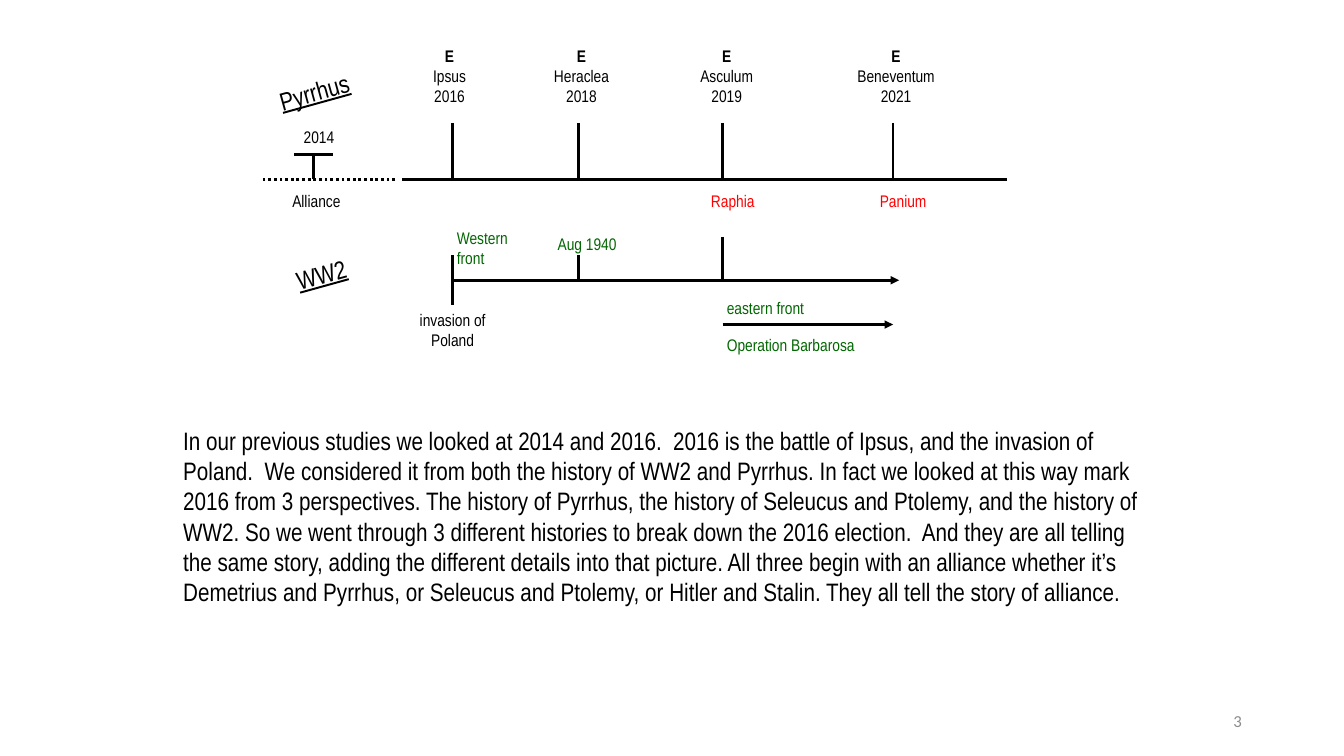
from lxml import etree
from pptx import Presentation
from pptx.dml.color import RGBColor
from pptx.enum.dml import MSO_LINE
from pptx.enum.shapes import MSO_CONNECTOR
from pptx.enum.text import MSO_ANCHOR, PP_ALIGN
from pptx.oxml.ns import qn
from pptx.util import Pt

LEFT, CENTER, RIGHT = PP_ALIGN.LEFT, PP_ALIGN.CENTER, PP_ALIGN.RIGHT
STRAIGHT, DOTTED = MSO_CONNECTOR.STRAIGHT, MSO_LINE.ROUND_DOT
TOP, MIDDLE = MSO_ANCHOR.TOP, MSO_ANCHOR.MIDDLE
BLACK = RGBColor(0, 0, 0)
RED = RGBColor(0xFF, 0, 0)
GREEN = RGBColor(0, 0x66, 0)
GRAY = RGBColor(0x8C, 0x8C, 0x8C)
NARROW = "Arial Narrow"

# Content: mark x, label centre x, battle, year
BATTLES = [
    (323.3, 321.1, "Ipsus", "2016"),
    (413.3, 415.4, "Heraclea", "2018"),
    (516.2, 519.1, "Asculum", "2019"),
    (637.9, 640.1, "Beneventum", "2021"),
]
IPSUS_X, HERACLEA_X, ASCULUM_X, BENEVENTUM_X = [b[0] for b in BATTLES]
PYRRHUS_Y, WW2_Y, EAST_Y = 128.2, 200.2, 231.8
ALLIANCE_X, ALLIANCE_Y = 223.9, 110.2

# Lines of text, left, top, width, height, colour, alignment
LABELS = [
    (["Raphia"], 489.6, 133.2, 67.7, 22.3, RED, CENTER),
    (["Panium"], 611.3, 133.2, 67.7, 22.3, RED, CENTER),
    (["Alliance"], 192.2, 133.2, 67.7, 22.3, BLACK, CENTER),
    (["2014"], 203, 87.8, 49.7, 18, BLACK, CENTER),
    (["invasion of", "Poland"], 291.6, 218.2, 63.4, 36, BLACK, CENTER),
    (["Western", "front"], IPSUS_X, 159.8, 49.7, 36, GREEN, LEFT),
    (["Aug 1940"], 395.3, 164.2, 49.7, 23, GREEN, LEFT),
    (["eastern front"], ASCULUM_X, 209.5, 76.3, 22.3, GREEN, LEFT),
    (["Operation Barbarosa"], ASCULUM_X, 236.2, 112.3, 22.3, GREEN, LEFT),
]
HEADINGS = [("Pyrrhus", 174.2, 51.8), ("WW2", 179.3, 182.2)]

# x1, y1, x2, y2
LINES = [
    (287.3, PYRRHUS_Y, 719.3, PYRRHUS_Y),
    (ALLIANCE_X, ALLIANCE_Y, ALLIANCE_X, PYRRHUS_Y),
    (210.2, ALLIANCE_Y, 237.6, ALLIANCE_Y),
    (IPSUS_X, WW2_Y - 18, IPSUS_X, WW2_Y + 18),
    (HERACLEA_X, WW2_Y - 18, HERACLEA_X, WW2_Y),
    (ASCULUM_X, WW2_Y - 31, ASCULUM_X, WW2_Y),
] + [(b[0], 87.8, b[0], PYRRHUS_Y) for b in BATTLES]
ARROWS = [
    (IPSUS_X, WW2_Y, 642.2, WW2_Y),
    (ASCULUM_X, EAST_Y, BENEVENTUM_X, EAST_Y),
]
BODY = (
    "In our previous studies we looked at 2014 and 2016.  2016 is the battle of "
    "Ipsus, and the invasion of Poland.  We considered it from both the history of "
    "WW2 and Pyrrhus. In fact we looked at this way mark 2016 from 3 perspectives. "
    "The history of Pyrrhus, the history of Seleucus and Ptolemy, and the history "
    "of WW2. So we went through 3 different histories to break down the 2016 "
    "election.  And they are all telling the same story, adding the different "
    "details into that picture. All three begin with an alliance whether it’s "
    "Demetrius and Pyrrhus, or Seleucus and Ptolemy, or Hitler and Stalin. They "
    "all tell the story of alliance."
)

prs = Presentation()
prs.slide_width, prs.slide_height = Pt(960), Pt(540)
s = prs.slides.add_slide(prs.slide_layouts[6])


def add_text(lines, x, y, w, h, color=BLACK, align=LEFT, size=12, font=NARROW,
             insets=(3, 3), anchor=TOP):
    """Add a text box with one paragraph per line."""
    sp = s.shapes.add_textbox(Pt(x), Pt(y), Pt(w), Pt(h))
    tf = sp.text_frame
    tf.word_wrap = True
    tf.vertical_anchor = anchor
    tf.margin_left = tf.margin_right = Pt(insets[0])
    tf.margin_top = tf.margin_bottom = Pt(insets[1])
    for i, line in enumerate(lines):
        p = tf.add_paragraph() if i else tf.paragraphs[0]
        p.alignment = align
        r = p.add_run()
        r.text = line
        r.font.name, r.font.size = font, Pt(size)
        r.font.color.rgb = color
    return sp


def add_line(x1, y1, x2, y2, arrow=False):
    """Add a straight 2 pt line, with an arrowhead at its end on request."""
    c = s.shapes.add_connector(STRAIGHT, Pt(x1), Pt(y1), Pt(x2), Pt(y2))
    c.line.color.rgb, c.line.width = BLACK, Pt(2)
    spPr = c._element.spPr
    if arrow:
        etree.SubElement(spPr.find(qn("a:ln")), qn("a:tailEnd"), type="triangle")
    etree.SubElement(spPr, qn("a:effectLst"))
    return c


# Timelines
for line in LINES:
    add_line(*line)
for line in ARROWS:
    add_line(*line, arrow=True)
add_line(282.2, PYRRHUS_Y, 187.9, PYRRHUS_Y).line.dash_style = DOTTED

# Battles above the Pyrrhus timeline
for _, center, battle, year in BATTLES:
    sp = add_text(["E", battle, year], center - 33.85, 29.5, 67.7, 58.3, align=CENTER)
    sp.text_frame.paragraphs[0].runs[0].font.bold = True

# Other labels and the tilted headings
for label in LABELS:
    add_text(*label)
for heading, x, y in HEADINGS:
    sp = add_text([heading], x, y, 101.5, 31.7, align=CENTER, size=18)
    sp.rotation = 344.5
    sp.text_frame.paragraphs[0].runs[0].font.underline = True

# Body text and slide number
add_text([BODY], 123.8, 300.2, 712.1, 152.6, size=18, insets=(7.2, 3.6))
add_text(["3"], 678.2, 500.4, 216, 28.8, GRAY, RIGHT, font="Calibri",
         insets=(7.2, 3.6), anchor=MIDDLE)

prs.save("out.pptx")
